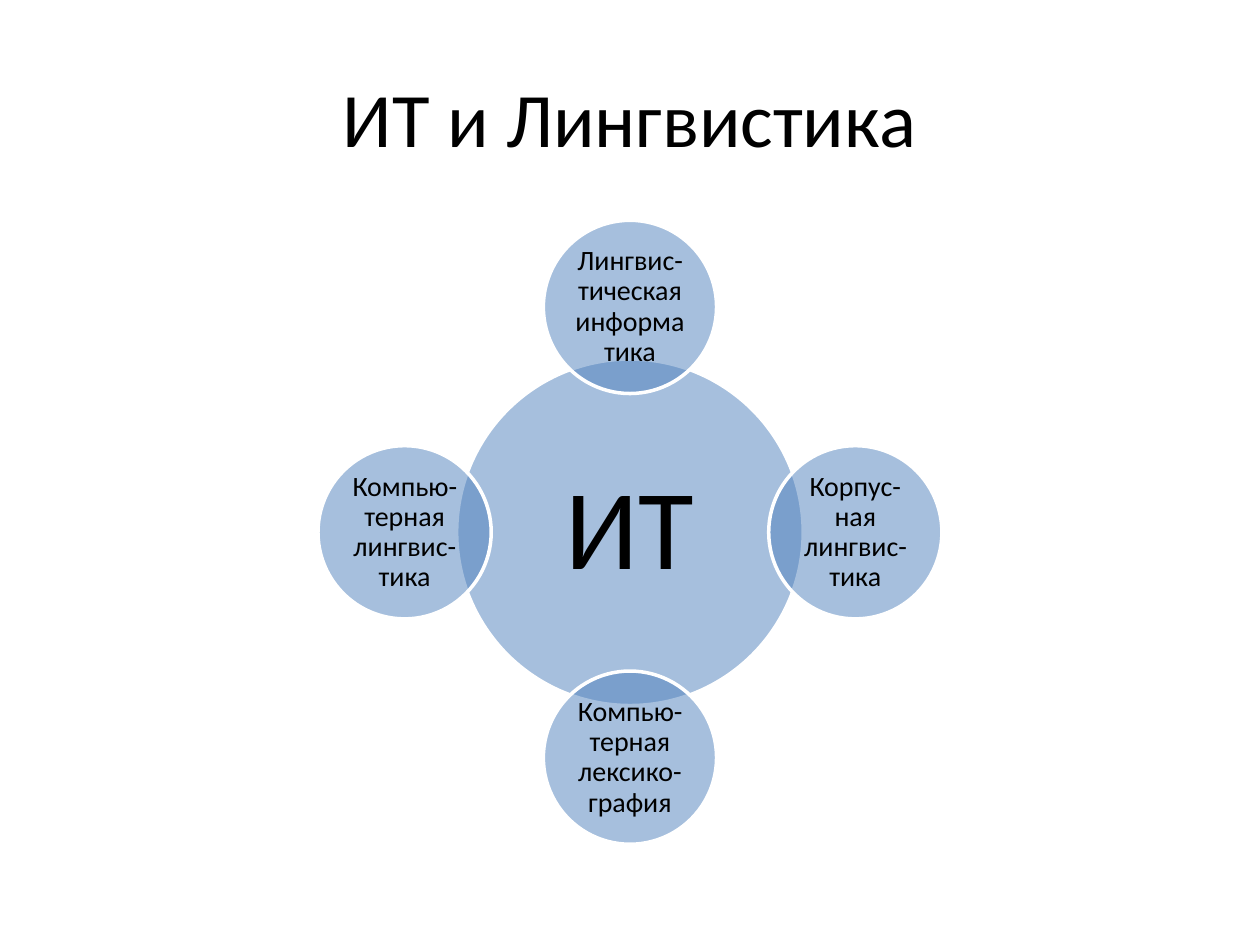
from dataclasses import dataclass

from lxml.etree import SubElement
from pptx import Presentation
from pptx.dml.color import RGBColor
from pptx.enum.shapes import MSO_SHAPE
from pptx.enum.text import MSO_ANCHOR, PP_ALIGN
from pptx.oxml.ns import qn
from pptx.util import Inches, Pt

WIDTH, HEIGHT = 10, 7.5
FONT = "Calibri"
BLACK, WHITE, BLUE = "000000", "FFFFFF", "4F81BD"

# Radial layout, as shares of the slide's height
CENTER_X, CENTER_Y = WIDTH / 2, HEIGHT * 0.5633
HUB_SIZE = HEIGHT * 0.3667
SATELLITE_SIZE = HEIGHT * 0.1833
ORBIT = HEIGHT * 0.2385


@dataclass(frozen=True)
class Circle:
    text: str
    column: int  # steps of one orbit right of the center
    row: int  # steps of one orbit below the center
    size: float = SATELLITE_SIZE
    font_size: int = 16
    inset: float = 0.02


CIRCLES = [
    Circle("ИТ", 0, 0, HUB_SIZE, 65, 0.09),
    Circle("Лингвис-тическая информатика", 0, -1),
    Circle("Корпус-ная лингвис-тика", 1, 0),
    Circle("Компью-терная лексико-графия", 0, 1),
    Circle("Компью-терная лингвис-тика", -1, 0),
]


def color(value: str) -> RGBColor:
    return RGBColor.from_string(value)


def write_text(shape, text: str, size: int, spacing: float = 1.0) -> None:
    frame = shape.text_frame
    frame.word_wrap = True
    frame.vertical_anchor = MSO_ANCHOR.MIDDLE
    paragraph = frame.paragraphs[0]
    paragraph.text = text
    paragraph.alignment = PP_ALIGN.CENTER
    paragraph.line_spacing = spacing
    paragraph.font.name = FONT
    paragraph.font.size = Pt(size)
    paragraph.font.color.rgb = color(BLACK)


def draw_circle(slide, circle: Circle) -> None:
    left = CENTER_X + circle.column * ORBIT - circle.size / 2
    top = CENTER_Y + circle.row * ORBIT - circle.size / 2
    shape = slide.shapes.add_shape(
        MSO_SHAPE.OVAL, Inches(left), Inches(top),
        Inches(circle.size), Inches(circle.size))
    shape.shadow.inherit = False
    shape.fill.solid()
    shape.fill.fore_color.rgb = color(BLUE)
    # Half-transparent fill, so that overlaps look darker
    fill_color = shape.fill._xPr.find(qn("a:solidFill")).find(qn("a:srgbClr"))
    SubElement(fill_color, qn("a:alpha"), val="50000")
    shape.line.color.rgb = color(WHITE)
    shape.line.width = Pt(2)

    frame = shape.text_frame
    frame.margin_left = frame.margin_right = Inches(circle.inset)
    frame.margin_top = frame.margin_bottom = Inches(circle.inset)
    write_text(shape, circle.text, circle.font_size, spacing=0.9)


def main() -> None:
    presentation = Presentation()
    presentation.slide_width = Inches(WIDTH)
    presentation.slide_height = Inches(HEIGHT)
    slide = presentation.slides.add_slide(presentation.slide_layouts[6])

    # Title
    title = slide.shapes.add_textbox(
        Inches(WIDTH * 0.05), Inches(HEIGHT * 0.04),
        Inches(WIDTH * 0.9), Inches(1.25))
    write_text(title, "ИТ и Лингвистика", 44)

    # Hub first, then the satellites over it
    for circle in CIRCLES:
        draw_circle(slide, circle)

    presentation.save("out.pptx")


if __name__ == "__main__":
    main()
